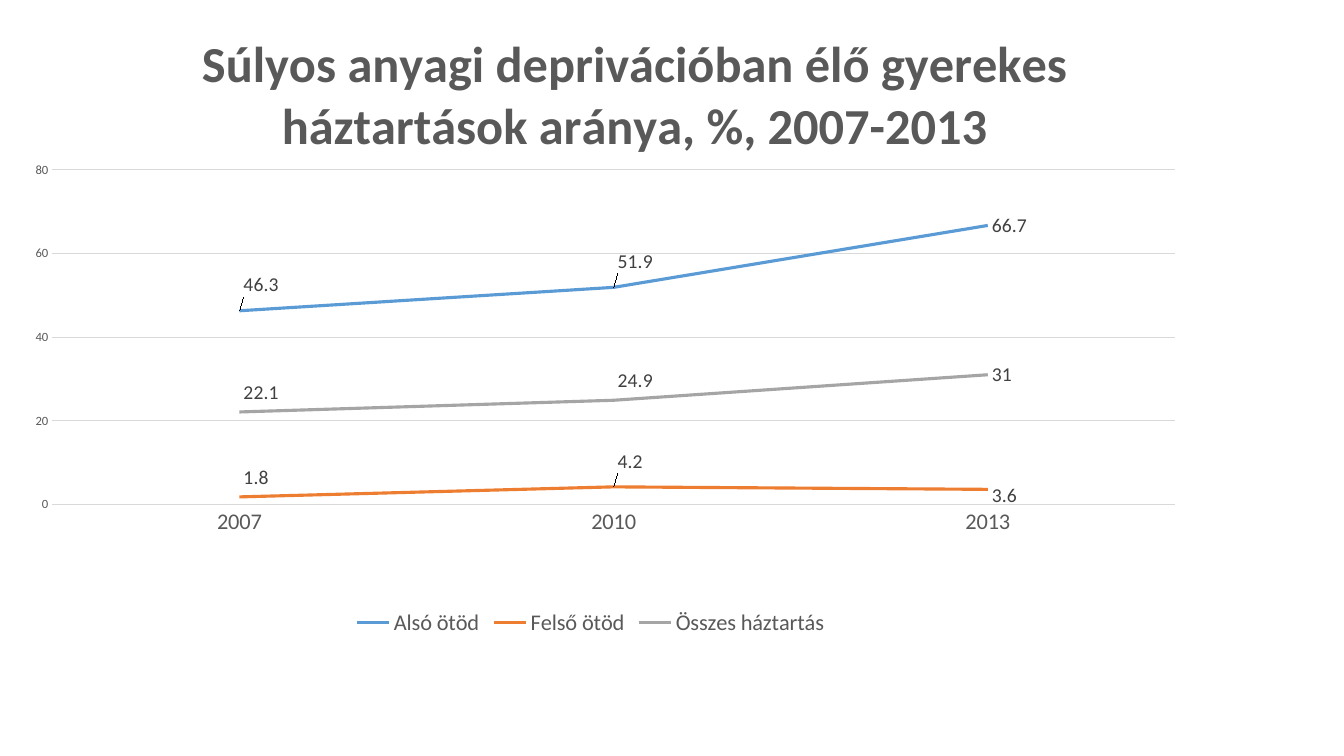
import pptx
import pptx.chart.data
import pptx.dml.color
import pptx.enum.chart
import pptx.oxml
import pptx.oxml.ns
import pptx.util

RGB = pptx.dml.color.RGBColor
BLUE = RGB(0x5B, 0x9B, 0xD5)
ORANGE = RGB(0xED, 0x7D, 0x31)
GREY = RGB(0xA5, 0xA5, 0xA5)
PALE = RGB(0xD9, 0xD9, 0xD9)
TEXT = RGB(0x59, 0x59, 0x59)
DARK = RGB(0x40, 0x40, 0x40)
BLACK = RGB(0, 0, 0)

ENUM = pptx.enum.chart
WIDE, HIGH = pptx.util.Inches(13.33), pptx.util.Inches(7.5)
TITLE = "Súlyos anyagi deprivációban élő gyerekes háztartások aránya, %, 2007-2013"
YEARS = ["2007", "2010", "2013"]
# Name, values, colour, and label shifts by point as shares of chart height
LINES = [
    ("Alsó ötöd", (46.3, 51.9, 66.7), BLUE, (-0.04, -0.04)),
    ("Felső ötöd", (1.8, 4.2, 3.6), ORANGE, (-0.03, -0.04, 0.01)),
    ("Összes háztartás", (22.1, 24.9, 31), GREY, (-0.03, -0.03)),
]


def put(item, **values):
    for name, value in values.items():
        setattr(item, name, value)


def style(font, size, color, bold=False):
    put(font, name="Calibri", size=pptx.util.Pt(size), bold=bold)
    font.color.rgb = color


def stroke(line, color, width):
    line.color.rgb = color
    line.width = pptx.util.Pt(width)


def place(node, index, **parts):
    """Give a chart part a manual layout, as its child at index."""
    for old in node.xpath("c:layout"):
        node.remove(old)
    inner = "".join(f'<c:{k} val="{v}"/>' for k, v in parts.items())
    names = pptx.oxml.ns.nsdecls("c")
    node.insert(index, pptx.oxml.parse_xml(
        f"<c:layout {names}><c:manualLayout>{inner}</c:manualLayout></c:layout>"))


def add_chart(slide):
    data = pptx.chart.data.CategoryChartData()
    data.categories = YEARS
    for name, values, *_ in LINES:
        data.add_series(name, values)
    frame = slide.shapes.add_chart(
        ENUM.XL_CHART_TYPE.LINE, int(-0.023 * WIDE), 0,
        int(0.925 * WIDE), int(0.848 * HIGH), data)
    chart = frame.chart
    style(chart.font, 10, BLACK)
    area = chart.element.xpath("c:chart/c:plotArea")[0]
    place(area, 0, layoutTarget="inner", xMode="edge", yMode="edge",
          x=0.067, y=0.265, w=0.903, h=0.522)
    return chart


def add_title(chart):
    chart.has_title = True
    para = chart.chart_title.text_frame.paragraphs[0]
    run = para.add_run()
    run.text = TITLE
    style(run.font, 36, TEXT, True)
    node = chart.element.xpath("c:chart/c:title")[0]
    place(node, 1, xMode="edge", yMode="edge", x=0.18, y=0.03)


def set_axes(chart):
    none = ENUM.XL_TICK_MARK.NONE
    for axis, size in ((chart.category_axis, 16), (chart.value_axis, 9)):
        put(axis, major_tick_mark=none, minor_tick_mark=none)
        style(axis.tick_labels.font, size, TEXT)
    stroke(chart.category_axis.format.line, PALE, 0.75)
    axis = chart.value_axis
    put(axis, minimum_scale=0, maximum_scale=80, major_unit=20,
        has_major_gridlines=True)
    axis.format.line.fill.background()
    stroke(axis.major_gridlines.format.line, PALE, 0.75)


def set_lines(chart):
    chart.plots[0].vary_by_categories = False
    right = ENUM.XL_LABEL_POSITION.RIGHT
    for line, (_, _, color, shifts) in zip(chart.series, LINES):
        line.smooth = False
        stroke(line.format.line, color, 2.25)
        put(line.data_labels, show_value=True, position=right)
        style(line.data_labels.font, 14, DARK)
        for i, shift in enumerate(shifts):
            label = line.points[i].data_label
            style(label.font, 14, DARK)
            label.position = right
        for node, shift in zip(line.data_labels.element.xpath("c:dLbl")
                               if hasattr(line.data_labels, "element")
                               else chart.element.xpath(
                                   f"//c:ser[c:idx/@val={line.index}]//c:dLbl"),
                               shifts):
            place(node, 1, x=0, y=shift)


def add_legend(chart):
    chart.has_legend = True
    put(chart.legend, position=ENUM.XL_LEGEND_POSITION.BOTTOM,
        include_in_layout=False)
    style(chart.legend.font, 16, TEXT)


def main():
    deck = pptx.Presentation()
    put(deck, slide_width=WIDE, slide_height=HIGH)
    slide = deck.slides.add_slide(deck.slide_layouts[6])
    chart = add_chart(slide)
    for step in (add_title, set_axes, set_lines, add_legend):
        step(chart)
    deck.save("out.pptx")


if __name__ == "__main__":
    main()
